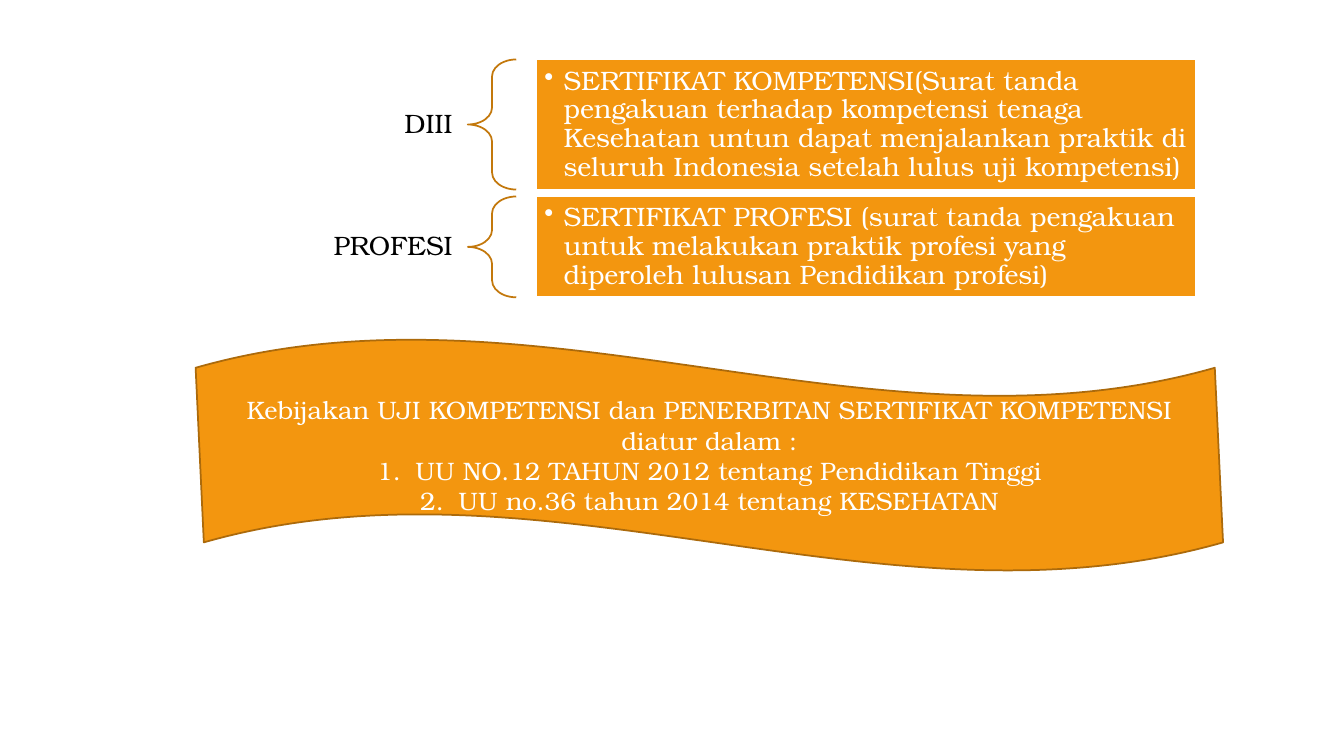
from lxml import etree
from pptx import Presentation
from pptx.dml.color import RGBColor
from pptx.enum.shapes import MSO_SHAPE
from pptx.enum.text import MSO_ANCHOR, PP_ALIGN
from pptx.oxml.ns import qn
from pptx.util import Inches, Pt

LEFT_BRACE, RECTANGLE, WAVE = MSO_SHAPE.LEFT_BRACE, MSO_SHAPE.RECTANGLE, MSO_SHAPE.WAVE
MIDDLE = MSO_ANCHOR.MIDDLE
LEFT, CENTER, RIGHT = PP_ALIGN.LEFT, PP_ALIGN.CENTER, PP_ALIGN.RIGHT

ORANGE = RGBColor(0xF3, 0x96, 0x0F)
BRACE_ORANGE = RGBColor(0xC3, 0x78, 0x0C)
WAVE_EDGE = RGBColor(0xAC, 0x6A, 0x0B)
WHITE = RGBColor(0xFF, 0xFF, 0xFF)
BLACK = RGBColor(0, 0, 0)
FONT = "TeX Gyre Bonum"

LABEL_WIDTH, LABEL_HEIGHT = 2.41, 0.41
BRACE_WIDTH, BRACE_GAP = 0.48, 0.2

# Level name, definition, top and height of each certificate row
CERTIFICATES = [
    ("DIII",
     "SERTIFIKAT KOMPETENSI(Surat tanda pengakuan terhadap kompetensi tenaga "
     "Kesehatan untun dapat menjalankan praktik di seluruh Indonesia setelah "
     "lulus uji kompetensi)", 0.59, 1.29),
    ("PROFESI",
     "SERTIFIKAT PROFESI (surat tanda pengakuan untuk melakukan praktik profesi "
     "yang diperoleh lulusan Pendidikan profesi)", 1.95, 1.0),
]
POLICY = ("Kebijakan UJI KOMPETENSI dan PENERBITAN SERTIFIKAT KOMPETENSI "
          "diatur dalam :")
LAWS = ["UU NO.12 TAHUN 2012 tentang Pendidikan Tinggi",
        "UU no.36 tahun 2014 tentang KESEHATAN"]


def add_outlined(slide, preset, box, edge, fill=None):
    shape = slide.shapes.add_shape(preset, *map(Inches, box))
    shape.shadow.inherit = False
    if fill is None:
        shape.fill.background()
    else:
        shape.fill.solid()
        shape.fill.fore_color.rgb = fill
    shape.line.color.rgb = edge
    shape.line.width = Pt(1.25)
    return shape


def set_margins(frame, horizontal, vertical):
    frame.word_wrap = True
    frame.vertical_anchor = MIDDLE
    frame.margin_left = frame.margin_right = Inches(horizontal)
    frame.margin_top = frame.margin_bottom = Inches(vertical)


def write(paragraph, text, size, color, align):
    paragraph.text = text
    paragraph.alignment = align
    paragraph.font.name = FONT
    paragraph.font.size = Pt(size)
    paragraph.font.color.rgb = color


def add_marker(paragraph, indent, tag, **attributes):
    """Give the paragraph a hanging bullet or number."""
    properties = paragraph._p.get_or_add_pPr()
    properties.set("marL", str(Inches(indent)))
    properties.set("indent", str(-Inches(indent)))
    etree.SubElement(properties, qn(tag), **attributes)


def add_certificate(slide, name, definition, left, top, width, height):
    """Place a level name, a brace and its definition side by side."""
    label = slide.shapes.add_textbox(
        Inches(left), Inches(top + (height - LABEL_HEIGHT) / 2),
        Inches(LABEL_WIDTH), Inches(LABEL_HEIGHT)).text_frame
    set_margins(label, 0.15, 0.05)
    write(label.paragraphs[0], name, 19, BLACK, RIGHT)
    label.paragraphs[0].line_spacing = 0.9

    brace_left = left + LABEL_WIDTH
    brace = add_outlined(slide, LEFT_BRACE, (brace_left, top, BRACE_WIDTH, height),
                         BRACE_ORANGE)
    brace.adjustments[0] = 0.35

    panel_left = brace_left + BRACE_WIDTH + BRACE_GAP
    panel = add_outlined(slide, RECTANGLE,
                         (panel_left, top, left + width - panel_left, height),
                         WHITE, ORANGE).text_frame
    set_margins(panel, 0.08, 0.08)
    paragraph = panel.paragraphs[0]
    add_marker(paragraph, 0.19, "a:buChar", char="•")
    write(paragraph, definition, 19, WHITE, LEFT)
    paragraph.line_spacing = 0.9


def add_policy_wave(slide, box):
    wave = add_outlined(slide, WAVE, box, WAVE_EDGE, ORANGE)
    wave.adjustments[0] = 0.125
    wave.adjustments[1] = 0.004
    frame = wave.text_frame
    set_margins(frame, 0.1, 0.05)
    write(frame.paragraphs[0], POLICY, 18, WHITE, CENTER)
    for law in LAWS:
        paragraph = frame.add_paragraph()
        add_marker(paragraph, 0.38, "a:buAutoNum", type="arabicPeriod")
        write(paragraph, law, 18, WHITE, CENTER)


def main():
    presentation = Presentation()
    presentation.slide_width = Inches(13.33)
    presentation.slide_height = Inches(7.5)
    slide = presentation.slides.add_slide(presentation.slide_layouts[6])
    for name, definition, top, height in CERTIFICATES:
        add_certificate(slide, name, definition, 2.23, top, 9.63, height)
    add_policy_wave(slide, (1.94, 3.36, 10.19, 2.31))
    presentation.save("out.pptx")


if __name__ == "__main__":
    main()
